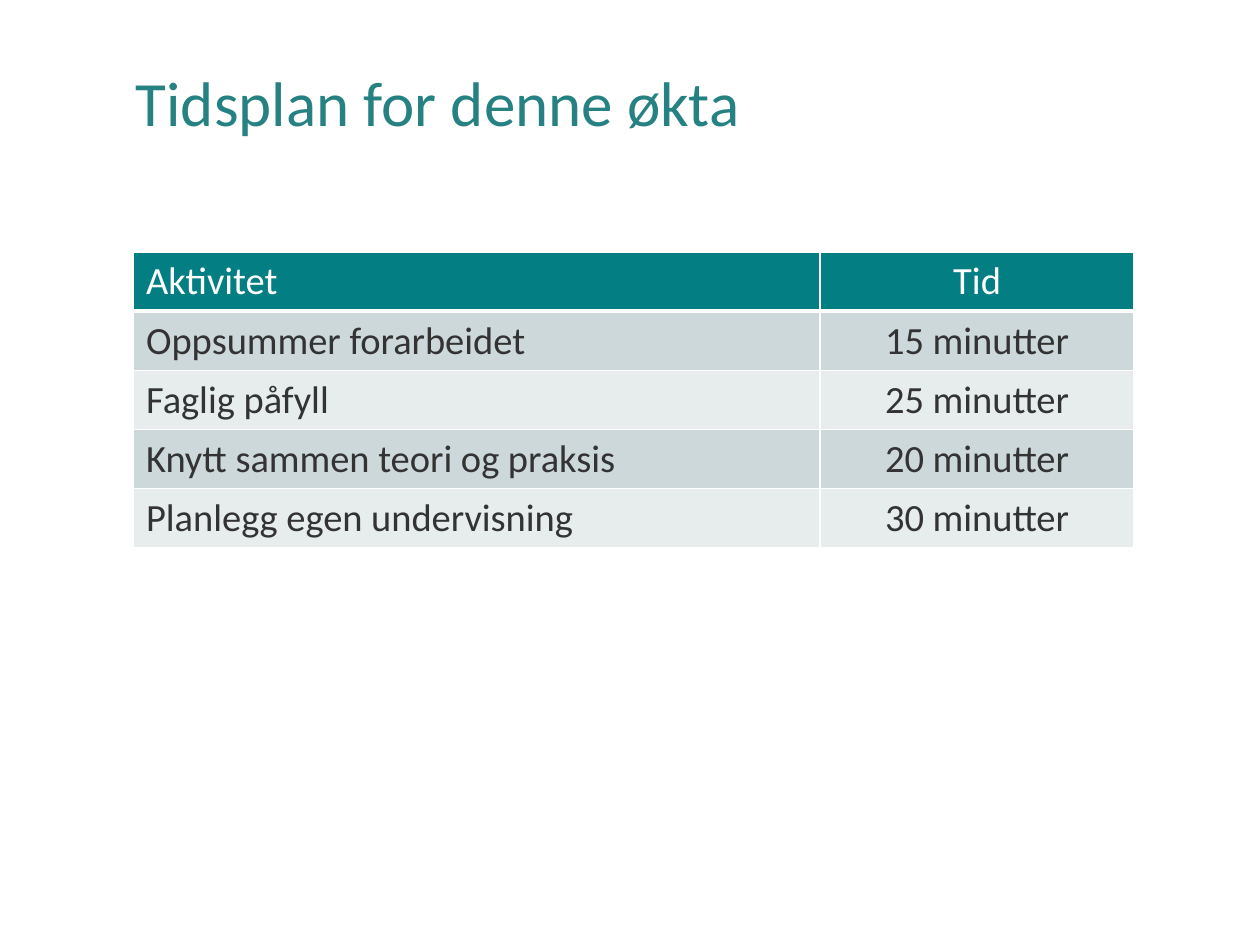
"""Build a slide with the timetable for a session."""
from lxml.etree import SubElement
from pptx import Presentation
from pptx.dml.color import RGBColor as RGB
from pptx.enum.text import MSO_ANCHOR as Anchor, PP_ALIGN as Align
from pptx.oxml.ns import qn
from pptx.util import Inches, Pt

TITLE = "Tidsplan for denne økta"
SCHEDULE = [
    ("Aktivitet", "Tid"),
    ("Oppsummer forarbeidet", "15 minutter"),
    ("Faglig påfyll", "25 minutter"),
    ("Knytt sammen teori og praksis", "20 minutter"),
    ("Planlegg egen undervisning", "30 minutter"),
]
COLORS = {
    "title": "268183", "header": "037F83", "header_text": "FFFFFF",
    "odd": "CCD8D9", "even": "E7ECED", "text": "333333", "border": "FFFFFF",
}
FONT = "Calibri"
COLUMN_WIDTHS = (5.45, 2.49)
COLUMN_ALIGNS = (Align.LEFT, Align.CENTER)
ROW_HEIGHT = 0.47


def add_text(paragraph, text, size, color):
    run = paragraph.add_run()
    run.text = text
    run.font.name = FONT
    run.font.size = Pt(size)
    run.font.color.rgb = RGB.from_string(COLORS[color])


def set_borders(cell, top, bottom):
    properties = cell._tc.get_or_add_tcPr()
    widths = {"a:lnL": 1, "a:lnR": 1, "a:lnT": top, "a:lnB": bottom}
    for position, (side, width) in enumerate(widths.items()):
        line = SubElement(properties, qn(side), w=str(Pt(width)))
        fill = SubElement(line, qn("a:solidFill"))
        SubElement(fill, qn("a:srgbClr"), val=COLORS["border"])
        properties.insert(position, line)


def add_title(slide):
    box = slide.shapes.add_textbox(Inches(0.98), Inches(0.4), Inches(8.29), Inches(1.45))
    frame = box.text_frame
    frame.word_wrap = True
    frame.vertical_anchor = Anchor.TOP
    frame.margin_top = Inches(0.17)
    heading = frame.paragraphs[0]
    heading.line_spacing = 0.9
    add_text(heading, TITLE, 36, "title")


def add_schedule(slide):
    table = slide.shapes.add_table(
        len(SCHEDULE), len(COLUMN_WIDTHS), Inches(1.06), Inches(2),
        Inches(sum(COLUMN_WIDTHS)), Inches(ROW_HEIGHT * len(SCHEDULE))).table
    for column, width in zip(table.columns, COLUMN_WIDTHS):
        column.width = Inches(width)
    for index, entries in enumerate(SCHEDULE):
        table.rows[index].height = Inches(ROW_HEIGHT)
        band = "header" if index == 0 else "odd" if index % 2 else "even"
        text_color = "header_text" if index == 0 else "text"
        for column, (entry, align) in enumerate(zip(entries, COLUMN_ALIGNS)):
            cell = table.cell(index, column)
            cell.fill.solid()
            cell.fill.fore_color.rgb = RGB.from_string(COLORS[band])
            set_borders(cell, 3 if index == 1 else 1, 3 if index == 0 else 1)
            paragraph = cell.text_frame.paragraphs[0]
            paragraph.alignment = align
            add_text(paragraph, entry, 22, text_color)
            paragraph.runs[0].font.bold = False


def main():
    deck = Presentation()
    deck.slide_width, deck.slide_height = Inches(10), Inches(7.5)
    slide = deck.slides.add_slide(deck.slide_layouts[6])
    add_title(slide)
    add_schedule(slide)
    deck.save("out.pptx")


if __name__ == "__main__":
    main()
